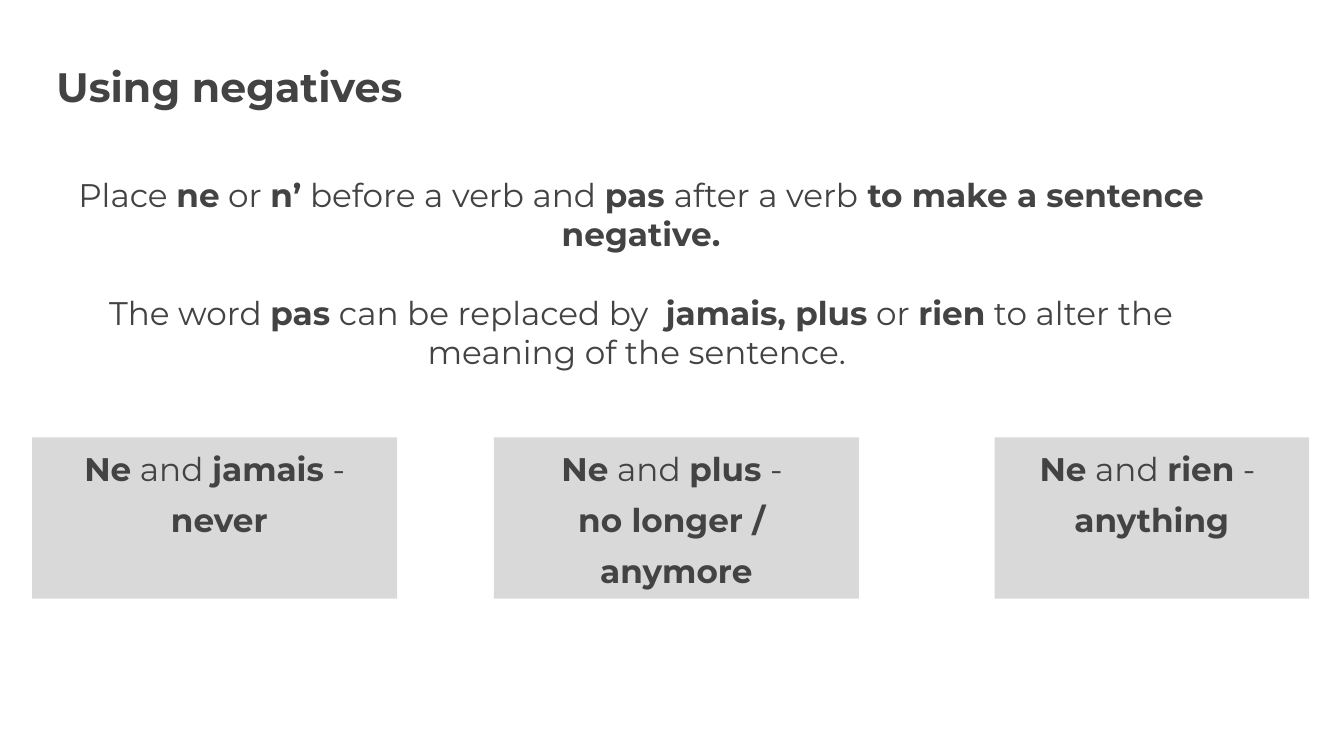
from pptx import Presentation, util as u
from pptx.dml.color import RGBColor
from pptx.enum import shapes, text

INK = "434343"
GREY = "D9D9D9"


def color(code):
    return RGBColor.from_string(code)


def write(frame, paras, size=35, align=text.PP_ALIGN.CENTER, line=1.0, gap=0, inset=0):
    frame.word_wrap = True
    frame.vertical_anchor = text.MSO_ANCHOR.TOP
    frame.margin_left = frame.margin_right = u.Inches(inset)
    frame.margin_top = frame.margin_bottom = u.Inches(inset)
    for i, words in enumerate(paras):
        para = frame.add_paragraph() if i else frame.paragraphs[0]
        para.alignment = align
        para.line_spacing = line
        if i:
            para.space_before = u.Pt(gap)
        for j, part in enumerate(words.split("**")):
            for k, piece in enumerate(part.split("\n")):
                if k:
                    para.add_line_break()
                if piece:
                    run = para.add_run()
                    run.text = piece
                    run.font.name = "Montserrat"
                    run.font.size = u.Pt(size)
                    run.font.bold = j % 2 == 1
                    run.font.color.rgb = color(INK)


def label(slide, left, top, width, height, paras, **style):
    box = slide.shapes.add_textbox(*map(u.Inches, (left, top, width, height)))
    write(box.text_frame, paras, **style)


def card(slide, left, width, words):
    box = slide.shapes.add_shape(
        shapes.MSO_SHAPE.RECTANGLE, *map(u.Inches, (left, 6.51, width, 2.4)))
    box.shadow.inherit = False
    box.fill.solid()
    box.fill.fore_color.rgb = color(GREY)
    box.line.fill.background()
    write(box.text_frame, [words], line=1.3)


def main():
    deck = Presentation()
    deck.slide_width, deck.slide_height = u.Inches(20), u.Inches(11.25)
    slide = deck.slides.add_slide(deck.slide_layouts[6])
    label(slide, 0.84, 0.81, 14.48, 0.9, ["**Using negatives**"],
          size=44, align=text.PP_ALIGN.LEFT, line=1.15)
    cards = [
        (0.48, 5.43, "**Ne** and **jamais** -\n** never**"),
        (7.35, 5.43, "**Ne** and **plus** - \n**no longer / \nanymore**"),
        (14.8, 4.68, "**Ne** and **rien** - \n**anything**"),
    ]
    for left, width, words in cards:
        card(slide, left, width, words)
    label(slide, 0.78, 2.5, 17.52, 1.68, [
        "Place **ne** or **n’** before a verb and **pas **after a verb"
        "** to make a sentence negative.**",
        "The word **pas** can be replaced by  **jamais, plus** or **rien**"
        " to alter the meaning of the sentence. ",
    ], gap=42.7, inset=0.1)
    deck.save("out.pptx")


if __name__ == "__main__":
    main()
